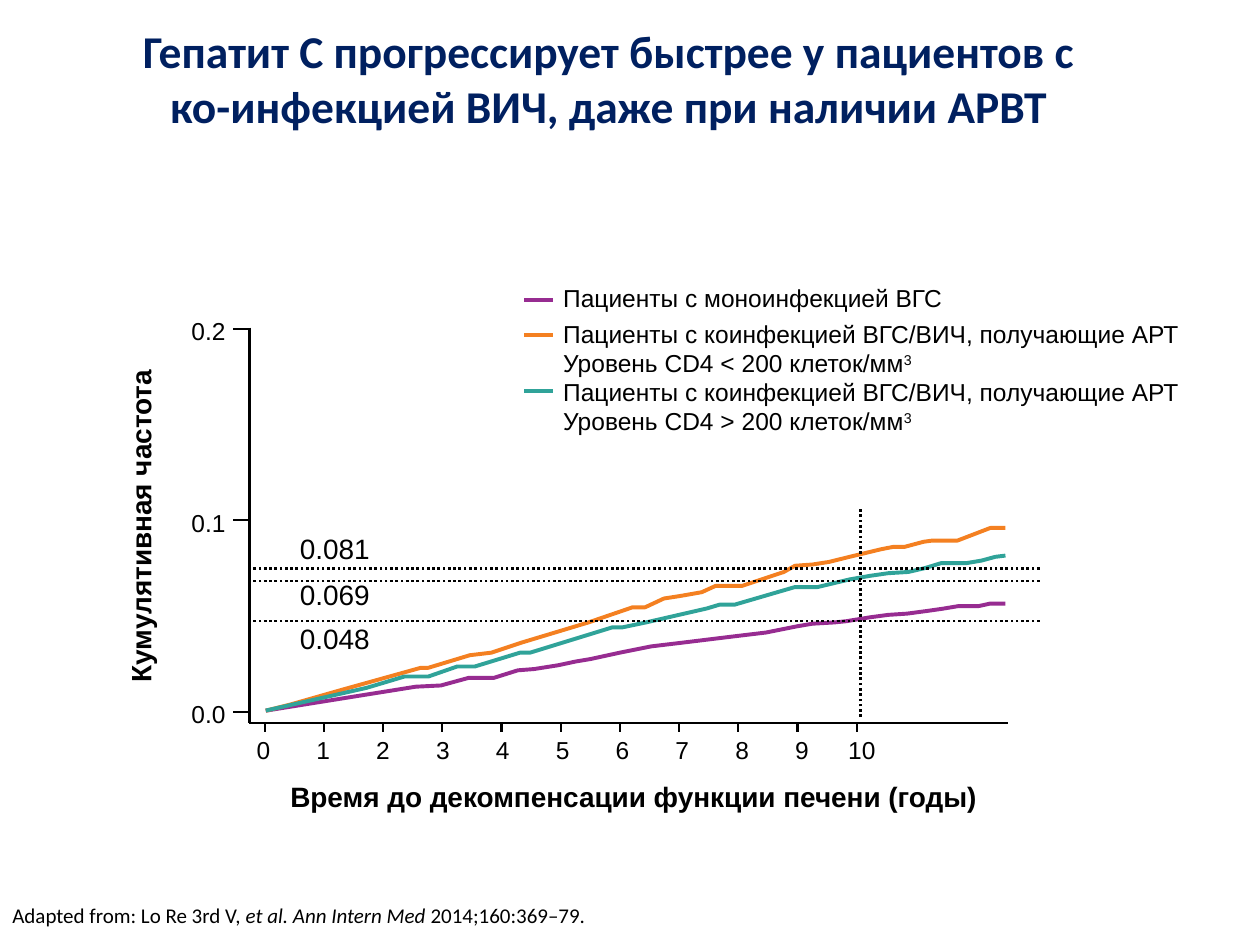
from dataclasses import dataclass

from lxml.etree import SubElement
from pptx import Presentation
from pptx.dml.color import RGBColor
from pptx.enum.dml import MSO_LINE
from pptx.enum.shapes import MSO_CONNECTOR
from pptx.enum.text import MSO_ANCHOR, MSO_AUTO_SIZE, PP_ALIGN
from pptx.oxml.ns import qn
from pptx.util import Inches, Pt

# The slide is a grid of 100 columns by 75 rows
COLS, ROWS = 100, 75
CELL = Inches(0.1)


@dataclass(frozen=True)
class Theme:
    head: str = "Calibri"
    body: str = "Arial"
    navy: str = "002060"
    ink: str = "000000"
    mono: str = "972C91"
    low: str = "F48021"
    high: str = "30A399"
    title: int = 26
    label: int = 16
    text: int = 14
    note: int = 12
    curve: float = 2.25
    dots: float = 1.5
    axis: float = 1.25


T = Theme()

# Plot frame: axis corner, first tick, tick steps
LEFT, RIGHT, TOP, BASE = 19.8, 80, 26, 57.4
YEAR0, YEAR = 21, 4.7
ZERO, TENTH = 56.5, 15.2

# Curves as (column, row) points
MONO = [
    (21.1, 56.4), (33, 54.5), (35, 54.4), (37.2, 53.8), (39.2, 53.8),
    (41.1, 53.2), (42.4, 53.1), (44.3, 52.8), (45.7, 52.5), (46.9, 52.3),
    (49.2, 51.8), (51.7, 51.3), (54.2, 51), (58.3, 50.5), (60.8, 50.2),
    (63.3, 49.7), (64.5, 49.5), (66.2, 49.4), (67.2, 49.3), (69, 49),
    (70.5, 48.8), (72, 48.7), (73.5, 48.5), (74.9, 48.3), (76.1, 48.1),
    (77.7, 48.1), (78.6, 47.9), (79.8, 47.9),
]
LOW = [
    (21.1, 56.4), (23.1, 55.9), (27.3, 54.7), (33.4, 53), (34, 53),
    (37.3, 52), (39, 51.8), (41.4, 51), (46.7, 49.4), (50.2, 48.2),
    (51.2, 48.2), (52.7, 47.5), (54, 47.3), (55.7, 47), (56.8, 46.5),
    (58.9, 46.5), (61.3, 45.7), (62.2, 45.4), (63.1, 44.9), (64.5, 44.8),
    (65.8, 44.6), (67.4, 44.2), (69.9, 43.6), (70.9, 43.4), (71.8, 43.4),
    (73.3, 43), (74, 42.9), (76, 42.9), (78.6, 41.9), (79.8, 41.9),
]
HIGH = [
    (21.1, 56.4), (29.1, 54.6), (32.1, 53.7), (34, 53.7), (36.3, 52.9),
    (37.7, 52.9), (41.3, 51.8), (42.1, 51.8), (48.6, 49.8), (49.4, 49.8),
    (51.3, 49.4), (56.1, 48.3), (57.1, 48), (58.3, 48), (63.1, 46.6),
    (64.9, 46.6), (67.4, 46), (69.1, 45.7), (70.5, 45.5), (72.1, 45.4),
    (73.4, 45.1), (74.7, 44.7), (76.7, 44.7), (77.9, 44.5), (79, 44.2),
    (79.8, 44.1),
]

DUAL = "Пациенты с коинфекцией ВГС/ВИЧ, получающие АРТ"
# Legend: colour, mark row, text row, width, height, lines of text
LEGEND = [
    (T.mono, 23.8, 22.5, 30.3, 2.4, [["Пациенты с моноинфекцией ВГС"]]),
    (T.low, 26.6, 25.3, 49.8, 4.7,
     [[DUAL], ["Уровень CD4 < 200 клеток/мм", ("3", "sup")]]),
    (T.high, 31, 29.9, 49.8, 4.7,
     [[DUAL], ["Уровень CD4 > 200 клеток/мм", ("3", "sup")]]),
]


def grid(n):
    return round(n * CELL)


def add_run(para, part):
    """Add a plain string, or a (string, "sup" or "ital") pair."""
    words, style = (part, "") if isinstance(part, str) else part
    run = para.add_run()
    run.text = words
    if style == "ital":
        run.font.italic = True
    elif style == "sup":
        run.font._element.set("baseline", "30000")


def add_text(slide, box, lines, size, align=PP_ALIGN.LEFT, face=T.body,
             tint=T.ink, bold=False, turn=0, block=False):
    """Add text; a block wraps and is centred in height, a label hugs it."""
    shape = slide.shapes.add_textbox(*map(grid, box))
    shape.rotation = turn
    frame = shape.text_frame
    frame.word_wrap = block
    if block:
        frame.vertical_anchor = MSO_ANCHOR.MIDDLE
    else:
        frame.auto_size = MSO_AUTO_SIZE.SHAPE_TO_FIT_TEXT
        frame.margin_left = frame.margin_right = 0
        frame.margin_top = frame.margin_bottom = 0
    for i, parts in enumerate(lines):
        para = frame.add_paragraph() if i else frame.paragraphs[0]
        para.alignment = align
        font = para.font
        font.name, font.size, font.bold = face, Pt(size), bold
        font.color.rgb = RGBColor.from_string(tint)
        for part in parts:
            add_run(para, part)


def set_line(shape, tint, width):
    shape.line.color.rgb = RGBColor.from_string(tint)
    shape.line.width = Pt(width)


def add_line(slide, x1, y1, x2, y2, tint=T.ink, width=T.axis, dots=False):
    line = slide.shapes.add_connector(
        MSO_CONNECTOR.STRAIGHT, *map(grid, (x1, y1, x2, y2)))
    set_line(line, tint, width)
    if dots:
        line.line.dash_style = MSO_LINE.ROUND_DOT
    SubElement(line._element.spPr, qn("a:effectLst"))


def add_curve(slide, points, tint):
    spots = [(grid(x), grid(y)) for x, y in points]
    path = slide.shapes.build_freeform(*spots[0])
    path.add_line_segments(spots[1:], close=False)
    curve = path.convert_to_shape()
    curve.fill.background()
    set_line(curve, tint, T.curve)
    curve.shadow.inherit = False


def add_legend(slide):
    for tint, mark, top, width, height, lines in LEGEND:
        add_text(slide, (44.7, top, width, height), lines, T.text)
        add_line(slide, 41.6, mark, 43.9, mark, tint, T.curve)


def add_axes(slide):
    mid = PP_ALIGN.CENTER
    add_line(slide, LEFT, TOP, LEFT, BASE)
    add_line(slide, LEFT, BASE, RIGHT, BASE)
    # Years
    for year in range(11):
        x = YEAR0 + YEAR * year
        add_line(slide, x, BASE, x, BASE + 0.7)
        wide = 1.2 * len(str(year))
        spot = 20.9 + 4.75 * year - wide / 2
        add_text(slide, (spot, 58.3, wide, 2.7), [[str(year)]], T.text, mid)
    # Rates
    for i, rate in enumerate(("0.0", "0.1", "0.2")):
        y = ZERO - TENTH * i
        add_line(slide, LEFT - 1.3, y, LEFT, y)
        add_text(slide, (14.7, y - 1, 3.2, 2.7), [[rate]], T.text,
                 PP_ALIGN.RIGHT)
    # Axis titles
    add_text(slide, (-1.4, 40.4, 25.1, 2.7), [["Кумулятивная частота"]],
             T.label, mid, bold=True, turn=270)
    add_text(slide, (22.7, 61.9, 55.2, 2.7),
             [["Время до декомпенсации функции печени (годы)"]],
             T.label, mid, bold=True)


def add_guides(slide):
    add_line(slide, 68.3, 56.9, 68.3, 40.3, width=T.dots, dots=True)
    for rate, top, y in (("0.081", 42.2, 45.1), ("0.069", 45.8, 46.1),
                         ("0.048", 49.3, 49.3)):
        add_text(slide, (23.8, top, 5.6, 3.1), [[rate]], T.label)
        add_line(slide, 82.5, y, LEFT, y, width=T.dots, dots=True)


def main():
    deck = Presentation()
    deck.slide_width, deck.slide_height = grid(COLS), grid(ROWS)
    slide = deck.slides.add_slide(deck.slide_layouts[6])
    # Title and source
    add_text(slide, (8.6, -0.1, 79.5, 12.5),
             [["Гепатит С прогрессирует быстрее у пациентов с "
               "ко-инфекцией ВИЧ, даже при наличии АРВТ"]],
             T.title, PP_ALIGN.CENTER, T.head, T.navy, True, block=True)
    add_text(slide, (0, 70.3, 78, 4.6),
             [["Adapted from: Lo Re 3rd V, ",
               ("et al. Ann Intern Med ", "ital"), "2014;160:369–79."]],
             T.note, face=T.head, block=True)
    # Plot
    add_legend(slide)
    add_axes(slide)
    for points, tint in ((MONO, T.mono), (LOW, T.low), (HIGH, T.high)):
        add_curve(slide, points, tint)
    add_guides(slide)
    deck.save("out.pptx")


if __name__ == "__main__":
    main()
